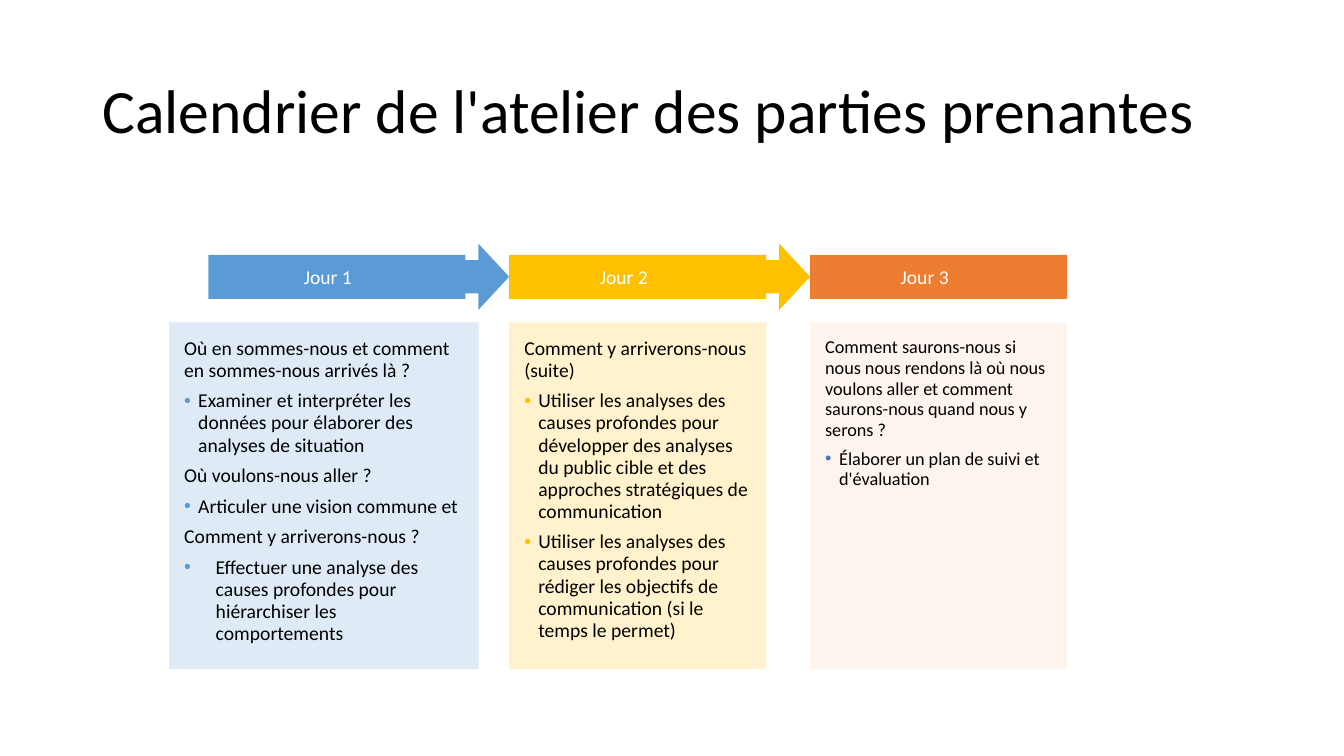
from dataclasses import dataclass
from typing import NamedTuple

from lxml import etree
from pptx import Presentation
from pptx import util as u
from pptx.dml import color
from pptx.enum import shapes, text
from pptx.oxml import ns


@dataclass(frozen=True)
class Theme:
    """Colours, font and type sizes of the deck."""
    font: str = "Calibri"
    ink: str = "000000"
    light: str = "FFFFFF"
    blue: str = "5B9BD5"
    gold: str = "FFC000"
    orange: str = "ED7D31"
    peach: str = "F7CAAC"
    indigo: str = "4472C4"
    title: float = 44
    label: float = 14
    body: float = 14
    small: float = 13


class Box(NamedTuple):
    """A rectangle in points."""
    left: float
    top: float
    width: float
    height: float


THEME = Theme()
QUESTION, BULLET, WIDE_BULLET = 0, 10, 22.5

DAYS = [
    dict(label="Jour 1", header=THEME.blue, panel=THEME.blue, bullet=THEME.blue,
         size=THEME.body, indent=54, arrow=True, outdent=28, widen=37.5, items=[
             (QUESTION, "Où en sommes-nous et comment en sommes-nous arrivés là ?"),
             (BULLET, "Examiner et interpréter les données pour élaborer des analyses de situation"),
             (QUESTION, "Où voulons-nous aller ?"),
             (BULLET, "Articuler une vision commune et"),
             (QUESTION, "Comment y arriverons-nous ?"),
             (WIDE_BULLET, "Effectuer une analyse des causes profondes pour hiérarchiser les comportements")]),
    dict(label="Jour 2", header=THEME.gold, panel=THEME.gold, bullet=THEME.gold,
         size=THEME.body, indent=50.5, arrow=True, outdent=0, widen=0, items=[
             (QUESTION, "Comment y arriverons-nous (suite)"),
             (BULLET, "Utiliser les analyses des causes profondes pour développer des analyses "
                      "du public cible et des approches stratégiques de communication"),
             (BULLET, "Utiliser les analyses des causes profondes pour rédiger les objectifs "
                      "de communication (si le temps le permet)")]),
    dict(label="Jour 3", header=THEME.orange, panel=THEME.peach, bullet=THEME.indigo,
         size=THEME.small, indent=50.5, arrow=False, outdent=0, widen=0, items=[
             (QUESTION, "Comment saurons-nous si nous nous rendons là où nous voulons aller "
                        "et comment saurons-nous quand nous y serons ?"),
             (BULLET, "Élaborer un plan de suivi et d'évaluation")]),
]


def assign(target, values):
    """Set each named attribute of the target."""
    for name, value in values.items():
        setattr(target, name, value)


def frame_text(frame, anchor, across, down):
    """Set wrapping, anchor and insets of a text frame."""
    assign(frame, dict(word_wrap=True, auto_size=text.MSO_AUTO_SIZE.NONE,
                       vertical_anchor=anchor,
                       margin_left=u.Pt(across), margin_right=u.Pt(across),
                       margin_top=u.Pt(down), margin_bottom=u.Pt(down)))


def write(para, words, size, ink, spacing=1.0, before=0):
    """Write one left-aligned run into a paragraph."""
    assign(para, dict(alignment=text.PP_ALIGN.LEFT, line_spacing=spacing,
                      space_before=u.Pt(before)))
    span = para.add_run()
    span.text = words
    assign(span.font, dict(name=THEME.font, size=u.Pt(size)))
    span.font.color.rgb = color.RGBColor.from_string(ink)


def indent(para, margin, hanging=0):
    """Set the left margin and hanging indent of a paragraph."""
    properties = para._p.get_or_add_pPr()
    properties.set("marL", str(u.Pt(margin)))
    properties.set("indent", str(-u.Pt(hanging)))


def add_bullet(para, margin, ink):
    """Give a paragraph a coloured bullet that hangs in its margin."""
    indent(para, margin, margin)
    properties = para._p.get_or_add_pPr()
    tint = etree.SubElement(properties, ns.qn("a:buClr"))
    etree.SubElement(tint, ns.qn("a:srgbClr"), val=ink)
    etree.SubElement(properties, ns.qn("a:buFont"), typeface="Arial")
    etree.SubElement(properties, ns.qn("a:buChar"), char="•")


def add_block(page, kind, box, fill, alpha=100):
    """Add a flat shape without outline, with an opacity in percent."""
    block = page.shapes.add_shape(kind, *map(u.Pt, box))
    block.shadow.inherit = False
    block.line.fill.background()
    block.fill.solid()
    block.fill.fore_color.rgb = color.RGBColor.from_string(fill)
    if alpha < 100:
        tint = block._element.spPr.find(".//" + ns.qn("a:srgbClr"))
        etree.SubElement(tint, ns.qn("a:alpha"), val=str(alpha * 1000))
    return block


def add_title(page, box, words):
    """Place the title placeholder in its box."""
    title = page.shapes.title
    assign(title, dict(zip(("left", "top", "width", "height"), map(u.Pt, box))))
    frame_text(title.text_frame, text.MSO_ANCHOR.MIDDLE, 7.2, 3.6)
    write(title.text_frame.paragraphs[0], words, THEME.title, THEME.ink, 0.9)


def add_header(page, box, day):
    """Draw the coloured bar that names the day."""
    header = add_block(page, shapes.MSO_SHAPE.RECTANGLE, box, day["header"])
    frame_text(header.text_frame, text.MSO_ANCHOR.MIDDLE, 14.2, 7.1)
    para = header.text_frame.paragraphs[0]
    write(para, day["label"], THEME.label, THEME.light)
    indent(para, day["indent"])


def add_panel(page, box, day):
    """Draw the tinted panel with the questions and tasks of the day."""
    panel = add_block(page, shapes.MSO_SHAPE.RECTANGLE, box, day["panel"], 20)
    frame = panel.text_frame
    frame_text(frame, text.MSO_ANCHOR.TOP, 10.8, 10.8)
    for number, (margin, words) in enumerate(day["items"]):
        para = frame.add_paragraph() if number else frame.paragraphs[0]
        write(para, words, day["size"], THEME.ink, 0.94, 6 if number else 0)
        if margin:
            add_bullet(para, margin, day["bullet"])


def add_day(page, box, gap, day):
    """Draw one day: arrow to the next day, panel and header."""
    if day["arrow"]:
        width, height = 44, 47.4
        tip = box.left + box.width + gap
        add_block(page, shapes.MSO_SHAPE.RIGHT_ARROW,
                  Box(tip - width, box.top - 8, width, height), day["header"])
    drop = 48.3
    add_panel(page, Box(box.left - day["outdent"], box.top + drop,
                        box.width + day["widen"], box.height - drop), day)
    add_header(page, box._replace(height=31.5), day)


def add_calendar(page, box):
    """Spread the days evenly over the box."""
    width = 183.6
    gap = (box.width - width * len(DAYS)) / (len(DAYS) - 1)
    for number, day in enumerate(DAYS):
        left = box.left + number * (width + gap)
        add_day(page, box._replace(left=left, width=width), gap, day)


def main():
    """Build and save the deck."""
    deck = Presentation()
    assign(deck, dict(slide_width=u.Pt(960), slide_height=u.Pt(540)))
    page = deck.slides.add_slide(deck.slide_layouts.get_by_name("Title Only"))
    add_title(page, Box(66, 28.75, 828, 104.4), "Calendrier de l'atelier des parties prenantes")
    add_calendar(page, Box(148.8, 182, 613.4, 296))
    deck.save("out.pptx")


if __name__ == "__main__":
    main()
